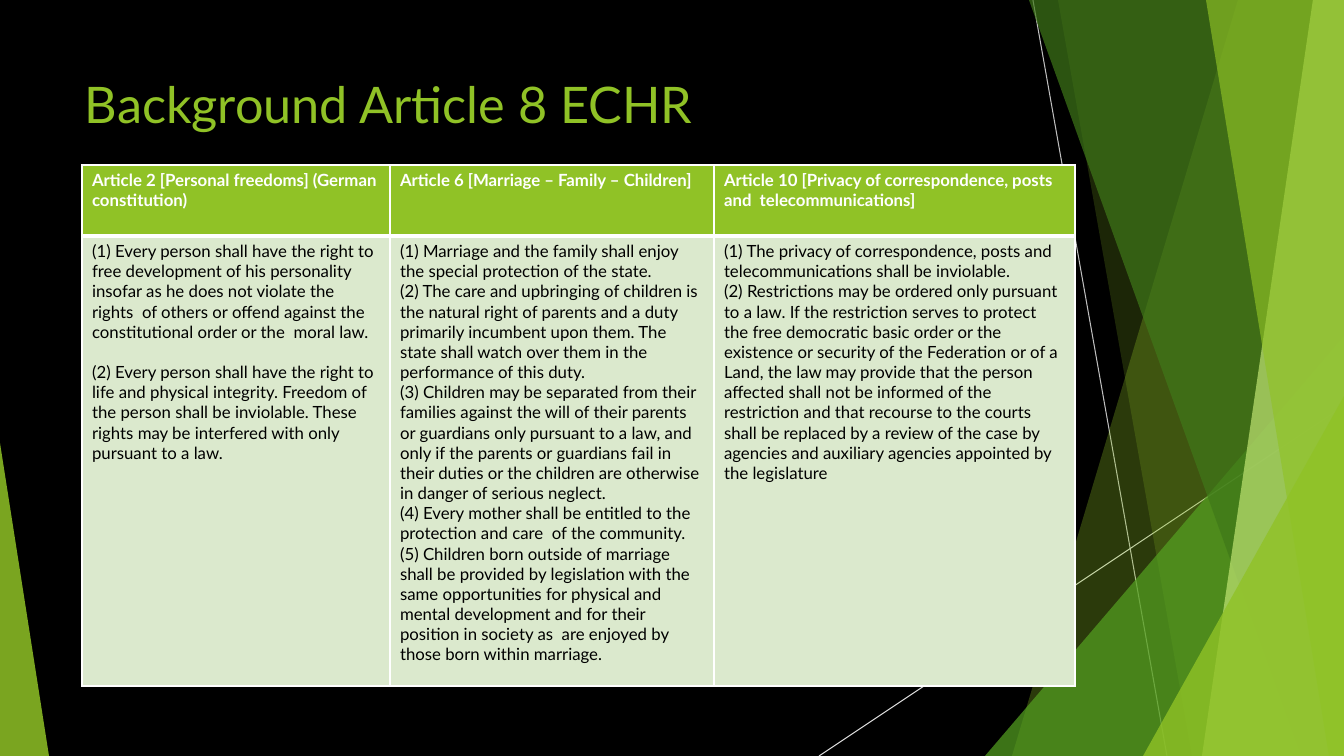
from dataclasses import dataclass

from lxml import etree
from pptx import Presentation
from pptx.dml.color import RGBColor
from pptx.enum.shapes import MSO_CONNECTOR, MSO_SHAPE
from pptx.oxml.ns import qn
from pptx.util import Pt

STRAIGHT = MSO_CONNECTOR.STRAIGHT
TRIANGLE = MSO_SHAPE.ISOSCELES_TRIANGLE
EMU_PER_PX = 914400 / 100.8
SLIDE_WIDTH, SLIDE_HEIGHT = 1344, 756


@dataclass(frozen=True)
class Theme:
    font: str = "Lato"
    title_size: int = 36
    table_size: int = 12
    background: str = "000000"
    text: str = "000000"
    white: str = "FFFFFF"
    lime: str = "90C226"
    green: str = "54A021"
    forest: str = "3F7819"
    pale_lime: str = "C0E474"
    cell: str = "DBE9CD"
    steep_line: str = "BFBFBF"
    flat_line: str = "D9D9D9"


THEME = Theme()

ARTICLES = [
    {
        "width": 308,
        "heading": "Article 2 [Personal freedoms] (German constitution)",
        "gap": 14.4,
        "clauses": [
            "(1) Every person shall have the right to free development of his personality insofar as he "
            "does not violate the rights  of others or offend against the constitutional order or the  "
            "moral law.",
            "(2) Every person shall have the right to life and physical integrity. Freedom of the person "
            "shall be inviolable. These rights may be interfered with only pursuant to a law.",
        ],
    },
    {
        "width": 324,
        "heading": "Article 6 [Marriage – Family – Children]",
        "gap": 0,
        "clauses": [
            "(1) Marriage and the family shall enjoy the special protection of the state.",
            "(2) The care and upbringing of children is the natural right of parents and a duty primarily "
            "incumbent upon them. The state shall watch over them in the performance of this duty.",
            "(3) Children may be separated from their families against the will of their parents or "
            "guardians only pursuant to a law, and only if the parents or guardians fail in their duties "
            "or the children are otherwise in danger of serious neglect.",
            "(4) Every mother shall be entitled to the protection and care  of the community.",
            "(5) Children born outside of marriage shall be provided by legislation with the same "
            "opportunities for physical and mental development and for their position in society as  are "
            "enjoyed by those born within marriage.",
        ],
    },
    {
        "width": 361,
        "heading": "Article 10 [Privacy of correspondence, posts and  telecommunications]",
        "gap": 0,
        "clauses": [
            "(1) The privacy of correspondence, posts and telecommunications shall be inviolable.",
            "(2) Restrictions may be ordered only pursuant to a law. If the restriction serves to protect "
            "the free democratic basic order or the existence or security of the Federation or of a Land, "
            "the law may provide that the person affected shall not be informed of the restriction and "
            "that recourse to the courts shall be replaced by a review of the case by agencies and "
            "auxiliary agencies appointed by the legislature",
        ],
    },
]


def px(length):
    return round(length * EMU_PER_PX)


def color(value):
    return RGBColor.from_string(value)


def fill_translucent(shape, fill_color, opacity):
    """Fill a borderless shape; opacity is a percentage."""
    shape.shadow.inherit = False
    shape.line.fill.background()
    shape.fill.solid()
    shape.fill.fore_color.rgb = color(fill_color)
    color_element = shape.fill._xPr.find(qn("a:solidFill"))[0]
    etree.SubElement(color_element, qn("a:alpha"), val=str(opacity * 1000))


def add_line(slide, start, end, line_color):
    line = slide.shapes.add_connector(STRAIGHT, *map(px, start + end))
    line.line.color.rgb = color(line_color)
    line.line.width = Pt(0.75)
    etree.SubElement(line._element.spPr, qn("a:effectLst"))


def add_panel(slide, top_left, bottom_left, fill_color, opacity):
    """Draw a full-height panel from a slanted left edge to the slide's right edge."""
    builder = slide.shapes.build_freeform(top_left, 0, scale=EMU_PER_PX)
    builder.add_line_segments(
        [(SLIDE_WIDTH, 0), (SLIDE_WIDTH, SLIDE_HEIGHT), (bottom_left, SLIDE_HEIGHT)], close=True
    )
    fill_translucent(builder.convert_to_shape(), fill_color, opacity)


def add_triangle(slide, left, top, width, apex, fill_color, opacity):
    """Stand a triangle on the slide's bottom edge; apex 0 is left, 1 is right."""
    triangle = slide.shapes.add_shape(
        TRIANGLE, px(left), px(top), px(width), px(SLIDE_HEIGHT - top)
    )
    triangle.adjustments[0] = apex
    fill_translucent(triangle, fill_color, opacity)


def write_text(text_frame, paragraphs, *, size, text_color, bold=False, gap=0):
    text_frame.word_wrap = True
    for index, text in enumerate(paragraphs):
        paragraph = text_frame.paragraphs[0] if index == 0 else text_frame.add_paragraph()
        if index < len(paragraphs) - 1:
            paragraph.space_after = Pt(gap)
        run = paragraph.add_run()
        run.text = text
        run.font.name = THEME.font
        run.font.size = Pt(size)
        run.font.bold = bold
        run.font.color.rgb = color(text_color)


def format_cell(cell, fill_color, top, bottom):
    """Fill a cell and give it white borders; top and bottom are points."""
    cell.fill.solid()
    cell.fill.fore_color.rgb = color(fill_color)
    properties = cell._tc.get_or_add_tcPr()
    borders = [("a:lnL", 1), ("a:lnR", 1), ("a:lnT", top), ("a:lnB", bottom)]
    for index, (tag, width) in enumerate(borders):
        border = etree.Element(qn(tag), w=str(Pt(width)))
        fill = etree.SubElement(border, qn("a:solidFill"))
        etree.SubElement(fill, qn("a:srgbClr"), val=THEME.white)
        properties.insert(index, border)


def add_article_table(slide, left, top, row_heights):
    width = sum(article["width"] for article in ARTICLES)
    table = slide.shapes.add_table(
        len(row_heights), len(ARTICLES), px(left), px(top), px(width), px(sum(row_heights))
    ).table
    for row, height in zip(table.rows, row_heights):
        row.height = px(height)
    for index, article in enumerate(ARTICLES):
        table.columns[index].width = px(article["width"])
        heading, body = table.cell(0, index), table.cell(1, index)
        format_cell(heading, THEME.lime, top=1, bottom=3)
        format_cell(body, THEME.cell, top=3, bottom=1)
        write_text(heading.text_frame, [article["heading"]],
                   size=THEME.table_size, text_color=THEME.white, bold=True)
        write_text(body.text_frame, article["clauses"],
                   size=THEME.table_size, text_color=THEME.text, gap=article["gap"])


def add_decoration(slide):
    add_line(slide, (1033, 0), (1167, SLIDE_HEIGHT), THEME.steep_line)
    add_line(slide, (SLIDE_WIDTH, 406), (819, SLIDE_HEIGHT), THEME.flat_line)
    add_panel(slide, 1238, 1012, THEME.lime, 30)
    add_panel(slide, 1058, 1192, THEME.lime, 20)
    add_triangle(slide, 985, 336, 359, 1, THEME.green, 72)
    add_panel(slide, 1029, 1301, THEME.forest, 70)
    add_panel(slide, 1313, 1202, THEME.pale_lime, 70)
    add_panel(slide, 1206, 1329, THEME.lime, 65)
    add_triangle(slide, 1143, 396, 201, 1, THEME.lime, 80)
    add_triangle(slide, 0, 443, 49, 0, THEME.lime, 85)


def main():
    presentation = Presentation()
    presentation.slide_width = px(SLIDE_WIDTH)
    presentation.slide_height = px(SLIDE_HEIGHT)
    slide = presentation.slides.add_slide(presentation.slide_layouts[6])
    slide.background.fill.solid()
    slide.background.fill.fore_color.rgb = color(THEME.background)
    add_decoration(slide)
    title = slide.shapes.add_textbox(px(75), px(68), px(948), px(145))
    write_text(title.text_frame, ["Background Article 8 ECHR"],
               size=THEME.title_size, text_color=THEME.lime)
    add_article_table(slide, left=82, top=165, row_heights=(71, 450))
    presentation.save("out.pptx")


if __name__ == "__main__":
    main()
